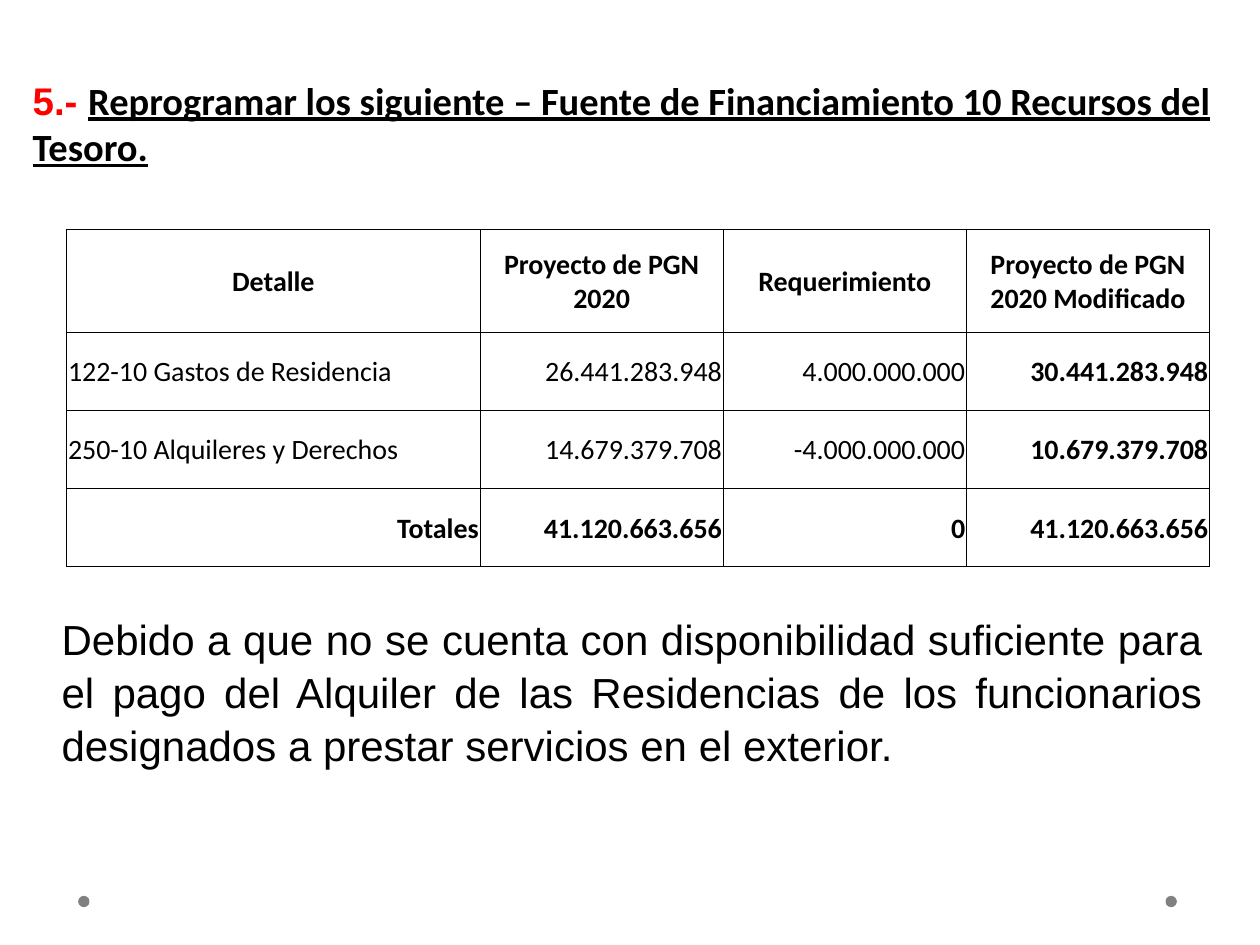
import pptx
import pptx.util
import pptx.dml.color
import pptx.enum.shapes
import pptx.enum.text
import pptx.oxml
import pptx.oxml.ns

Inches, Pt = pptx.util.Inches, pptx.util.Pt
ALIGN = pptx.enum.text.PP_ALIGN
ANCHOR = pptx.enum.text.MSO_ANCHOR


def rgb(value):
    return pptx.dml.color.RGBColor.from_string(value)


def add_borders(cell):
    borders = [
        pptx.oxml.parse_xml(
            f'<a:{side} {pptx.oxml.ns.nsdecls("a")} w="6350"><a:solidFill>'
            f'<a:srgbClr val="000000"/></a:solidFill></a:{side}>')
        for side in ("lnL", "lnR", "lnT", "lnB")]
    properties = cell._tc.get_or_add_tcPr()
    for position, border in enumerate(borders):
        properties.insert(position, border)


deck = pptx.Presentation()
deck.slide_width, deck.slide_height = Inches(10), Inches(7.5)
slide = deck.slides.add_slide(deck.slide_layouts[5])

# Footer dots
for left in (0.62, 9.25):
    dot = slide.shapes.add_shape(
        pptx.enum.shapes.MSO_SHAPE.OVAL,
        Inches(left), Inches(7.11), Inches(0.09), Inches(0.09))
    dot.shadow.inherit = False
    dot.fill.solid()
    dot.fill.fore_color.rgb = rgb("808080")
    dot.line.fill.background()

# Heading
heading = slide.shapes.title
heading.left, heading.top = Inches(0.16), Inches(0.26)
heading.width, heading.height = Inches(9.8), Inches(2.89)
frame = heading.text_frame
frame.word_wrap = True
frame.auto_size = pptx.enum.text.MSO_AUTO_SIZE.NONE
frame.vertical_anchor = ANCHOR.TOP
frame.margin_top = Inches(0.35)
paragraph = frame.paragraphs[0]
paragraph.alignment = ALIGN.LEFT
paragraph.font.size = Pt(22)
paragraph.font.bold = True
for text, font, color, underline in (
        ("5.- ", "Arial", "FF0000", False),
        ("Reprogramar los siguiente – Fuente de Financiamiento 10 Recursos "
         "del Tesoro.", "Calibri", "000000", True)):
    run = paragraph.add_run()
    run.text = text
    run.font.name = font
    run.font.color.rgb = rgb(color)
    run.font.underline = underline

# Budget table
budget_rows = [
    ("Detalle", "Proyecto de PGN 2020", "Requerimiento",
     "Proyecto de PGN 2020 Modificado"),
    ("122-10 Gastos de Residencia", "26.441.283.948", "4.000.000.000",
     "30.441.283.948"),
    ("250-10 Alquileres y Derechos", "14.679.379.708", "-4.000.000.000",
     "10.679.379.708"),
    ("Totales", "41.120.663.656", "0", "41.120.663.656"),
]
last = len(budget_rows) - 1
budget = slide.shapes.add_table(
    4, 4, Inches(0.53), Inches(1.82), Inches(9.06), Inches(2.67)).table
for column, width in zip(budget.columns, (3.28, 1.93, 1.93, 1.93)):
    column.width = Inches(width)
for row, height in zip(budget.rows, (0.82, 0.62, 0.62, 0.62)):
    row.height = Inches(height)

for r, values in enumerate(budget_rows):
    for c, value in enumerate(values):
        cell = budget.cell(r, c)
        cell.text = value
        cell.fill.background()
        cell.vertical_anchor = ANCHOR.MIDDLE
        cell.margin_left = cell.margin_right = cell.margin_top = Inches(0.01)
        cell.margin_bottom = 0
        add_borders(cell)
        paragraph = cell.text_frame.paragraphs[0]
        if r == 0:
            paragraph.alignment = ALIGN.CENTER
        elif c == 0 and r < last:
            paragraph.alignment = ALIGN.LEFT
        else:
            paragraph.alignment = ALIGN.RIGHT
        paragraph.font.name = "Calibri"
        paragraph.font.size = Pt(16)
        paragraph.font.bold = r in (0, last) or c == 3
        paragraph.font.color.rgb = rgb("000000")

# Justification
reason = slide.shapes.add_textbox(
    Inches(0.39), Inches(4.8), Inches(9.25), Inches(1.31))
reason.text_frame.word_wrap = True
paragraph = reason.text_frame.paragraphs[0]
paragraph.text = (
    "Debido a que no se cuenta con disponibilidad suficiente para el pago del "
    "Alquiler de las Residencias de los funcionarios designados a prestar "
    "servicios en el exterior.")
paragraph.alignment = ALIGN.JUSTIFY
paragraph.line_spacing = 1.05
paragraph.font.name = "Arial"
paragraph.font.size = Pt(24)
paragraph.font.color.rgb = rgb("000000")

deck.save("out.pptx")
